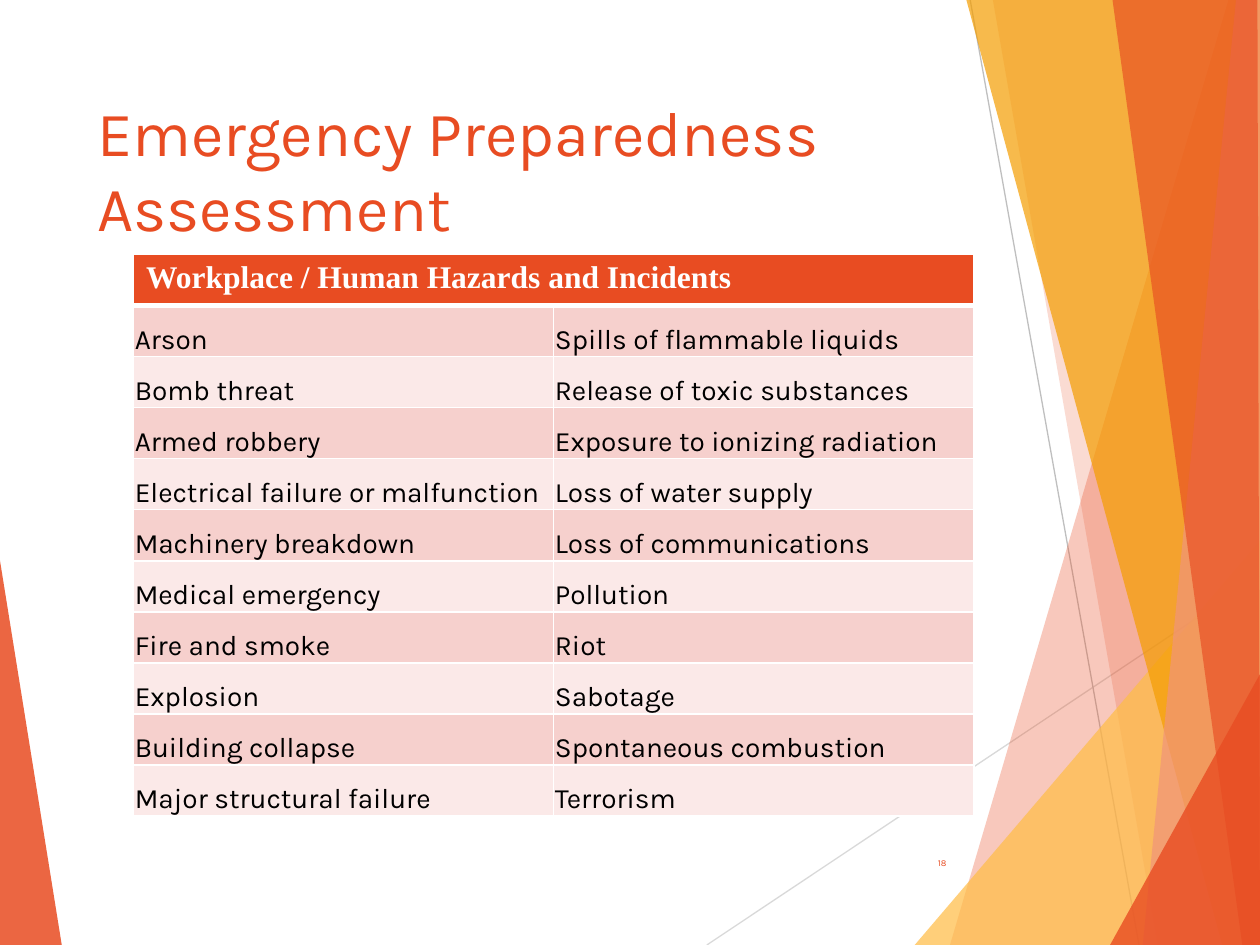
"""Build the emergency preparedness assessment slide."""
from dataclasses import dataclass

from lxml import etree
from pptx import Presentation
from pptx.dml.color import RGBColor
from pptx.enum.shapes import MSO_CONNECTOR
from pptx.enum.text import MSO_ANCHOR, MSO_AUTO_SIZE, PP_ALIGN
from pptx.oxml.ns import qn
from pptx.util import Inches, Pt

STRAIGHT = MSO_CONNECTOR.STRAIGHT
TOP, MIDDLE, BOTTOM = MSO_ANCHOR.TOP, MSO_ANCHOR.MIDDLE, MSO_ANCHOR.BOTTOM
LEFT, RIGHT = PP_ALIGN.LEFT, PP_ALIGN.RIGHT
NO_FIT = MSO_AUTO_SIZE.NONE
COLUMNS, ROWS = 10, 7.5


@dataclass(frozen=True)
class Theme:
    accent: str = "E84C22"
    salmon: str = "F1947A"
    amber: str = "F49D00"
    honey: str = "FFBD47"
    white: str = "FFFFFF"
    black: str = "000000"
    bands: tuple = ("F6D0CD", "FBE9E8")
    body_font: str = "Karla"
    header_font: str = "Times New Roman"
    title_size: float = 36
    header_size: float = 18
    cell_size: float = 16
    number_size: float = 9


THEME = Theme()
FACETS = [
    (THEME.accent, 85, [(0, 4.45), (0.49, 7.5), (0, 7.5)]),
    (THEME.accent, 30, [(9.75, 0), (7.54, 7.5), (10, 7.5), (10, 0)]),
    (THEME.accent, 20, [(7.88, 0), (9.19, 7.5), (10, 7.5), (10, 0)]),
    (THEME.honey, 72, [(7.26, 7.5), (10, 4.29), (10, 7.5)]),
    (THEME.amber, 70, [(7.67, 0), (9.7, 7.5), (10, 7.5), (10, 0)]),
    (THEME.salmon, 70, [(9.81, 0), (9.07, 7.5), (10, 7.5), (10, 0)]),
    (THEME.accent, 65, [(8.83, 0), (9.86, 7.5), (10, 7.5), (9.98, 0)]),
    (THEME.accent, 80, [(8.81, 7.5), (10, 5.35), (10, 7.5)]),
]
RULES = [("D9D9D9", (5.61, 7.5), (10, 4.57)), ("BFBFBF", (7.7, 0), (9.04, 7.5))]
HEADER = "Workplace / Human Hazards and Incidents"
HAZARDS = [
    ("Arson", "Spills of flammable liquids"),
    ("Bomb threat", "Release of toxic substances"),
    ("Armed robbery", "Exposure to ionizing radiation"),
    ("Electrical failure or malfunction", "Loss of water supply"),
    ("Machinery breakdown", "Loss of communications"),
    ("Medical emergency", "Pollution"),
    ("Fire and smoke", "Riot"),
    ("Explosion", "Sabotage"),
    ("Building collapse", "Spontaneous combustion"),
    ("Major structural failure", "Terrorism"),
]


class SlideBuilder:
    def __init__(self, deck, theme):
        self.theme = theme
        self.unit = deck.slide_width / COLUMNS
        self.page = deck.slides.add_slide(deck.slide_layouts[5])

    def grid(self, *lengths):
        return [round(length * self.unit) for length in lengths]

    def style(self, span, size, color, font=None, bold=False):
        span.font.name = font or self.theme.body_font
        span.font.size = Pt(size)
        span.font.bold = bold
        span.font.color.rgb = RGBColor.from_string(color)

    def facet(self, color, opacity, points):
        corners = [self.grid(*point) for point in points]
        builder = self.page.shapes.build_freeform(*corners[0])
        builder.add_line_segments(corners[1:], close=True)
        shape = builder.convert_to_shape()
        shape.shadow.inherit = False
        shape.line.fill.background()
        shape.fill.solid()
        shape.fill.fore_color.rgb = RGBColor.from_string(color)
        tint = shape.fill._xPr.find(".//" + qn("a:srgbClr"))
        etree.SubElement(tint, qn("a:alpha"), val=str(opacity * 1000))

    def rule(self, color, start, end):
        line = self.page.shapes.add_connector(STRAIGHT, *self.grid(*start, *end))
        line.line.color.rgb = RGBColor.from_string(color)
        line.line.width = Pt(0.75)
        etree.SubElement(line._element.spPr, qn("a:effectLst"))

    def fill_box(self, box, text, size, anchor, align):
        frame = box.text_frame
        frame.text = text
        frame.word_wrap = True
        frame.auto_size = NO_FIT
        frame.vertical_anchor = anchor
        para = frame.paragraphs[0]
        para.alignment = align
        self.style(para.runs[0], size, self.theme.accent)
        return para.runs[0]

    def title(self, text, place):
        box = self.page.shapes.title
        box.left, box.top, box.width, box.height = self.grid(*place)
        self.fill_box(box, text, self.theme.title_size, TOP, LEFT)

    def number(self, text, place):
        box = self.page.shapes.add_textbox(*self.grid(*place))
        span = self.fill_box(box, text, self.theme.number_size, MIDDLE, RIGHT)
        span.font._element.set("baseline", "-25000")

    def border(self, cell, bottom=1):
        properties = cell._tc.get_or_add_tcPr()
        for index, (side, width) in enumerate(zip("LRTB", (1, 1, 1, bottom))):
            edge = etree.Element(qn(f"a:ln{side}"), w=str(Pt(width)))
            paint = etree.SubElement(edge, qn("a:solidFill"))
            etree.SubElement(paint, qn("a:srgbClr"), val=self.theme.white)
            properties.insert(index, edge)

    def paint(self, cell, color, bottom=1):
        cell.fill.solid()
        cell.fill.fore_color.rgb = RGBColor.from_string(color)
        self.border(cell, bottom)

    def table(self, header, records, place):
        theme = self.theme
        count = len(records) + 1
        table = self.page.shapes.add_table(count, 2, *self.grid(*place)).table
        for cell in table.rows[0].cells:
            self.paint(cell, theme.accent, bottom=3)
        heading = table.cell(0, 0)
        heading.merge(table.cell(0, 1))
        heading.text = header
        span = heading.text_frame.paragraphs[0].runs[0]
        self.style(span, theme.header_size, theme.white, theme.header_font, True)
        for row, record in enumerate(records, 1):
            for column, text in enumerate(record):
                cell = table.cell(row, column)
                cell.text = text
                cell.vertical_anchor = BOTTOM
                cell.margin_left = cell.margin_right = cell.margin_top = Inches(0.01)
                cell.margin_bottom = 0
                span = cell.text_frame.paragraphs[0].runs[0]
                self.style(span, theme.cell_size, theme.black)
                self.paint(cell, theme.bands[(row - 1) % 2])


def main():
    deck = Presentation()
    deck.slide_width, deck.slide_height = Inches(COLUMNS), Inches(ROWS)
    slide = SlideBuilder(deck, THEME)
    slide.facet(*FACETS[0])
    for rule in RULES:
        slide.rule(*rule)
    for facet in FACETS[1:]:
        slide.facet(*facet)
    slide.title("Emergency Preparedness Assessment", (0.67, 0.69, 8.43, 0.93))
    slide.number("18", (7.05, 6.61, 0.56, 0.4))
    slide.table(HEADER, HAZARDS, (1.06, 2.02, 6.67, 4.46))
    deck.save("out.pptx")


if __name__ == "__main__":
    main()
